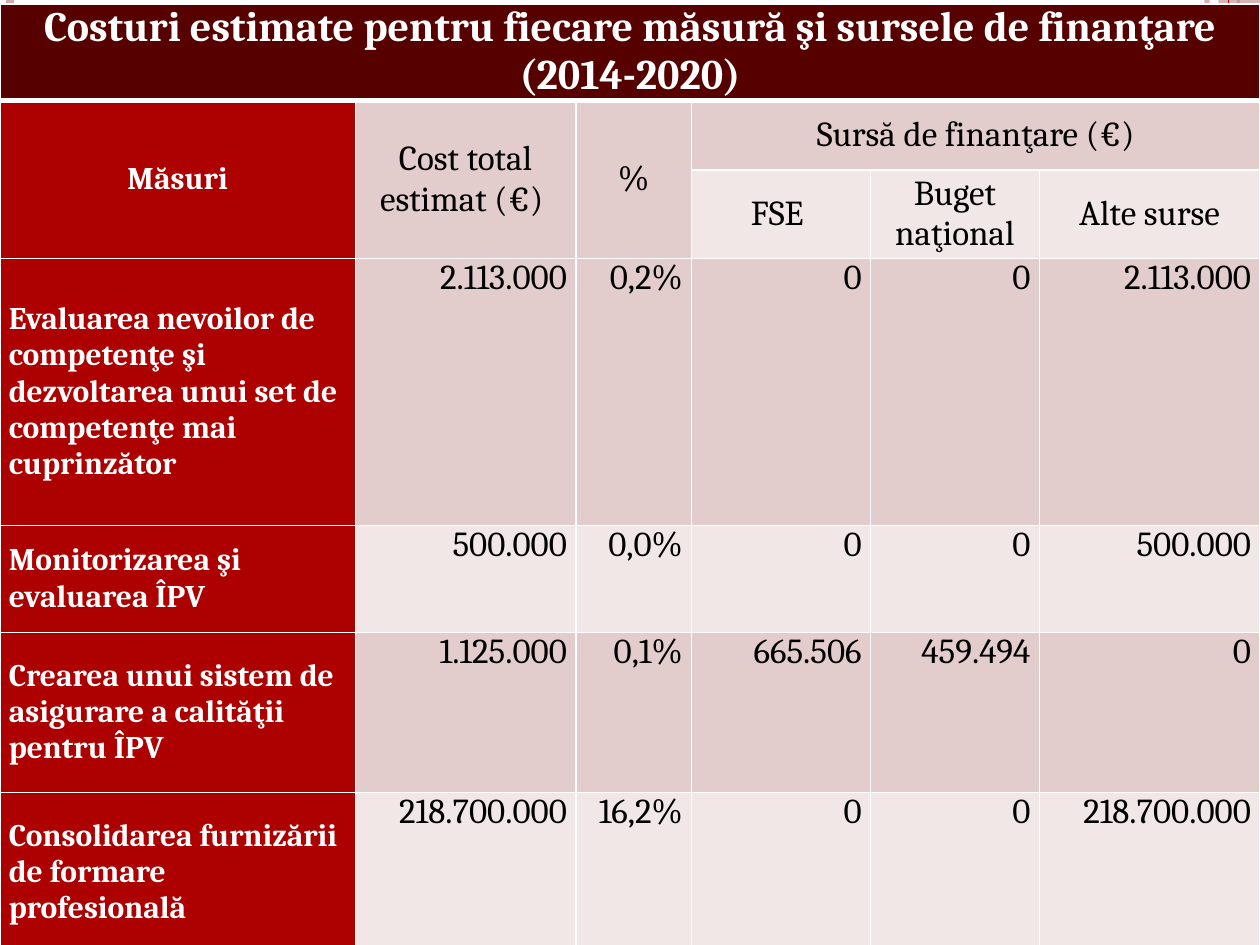
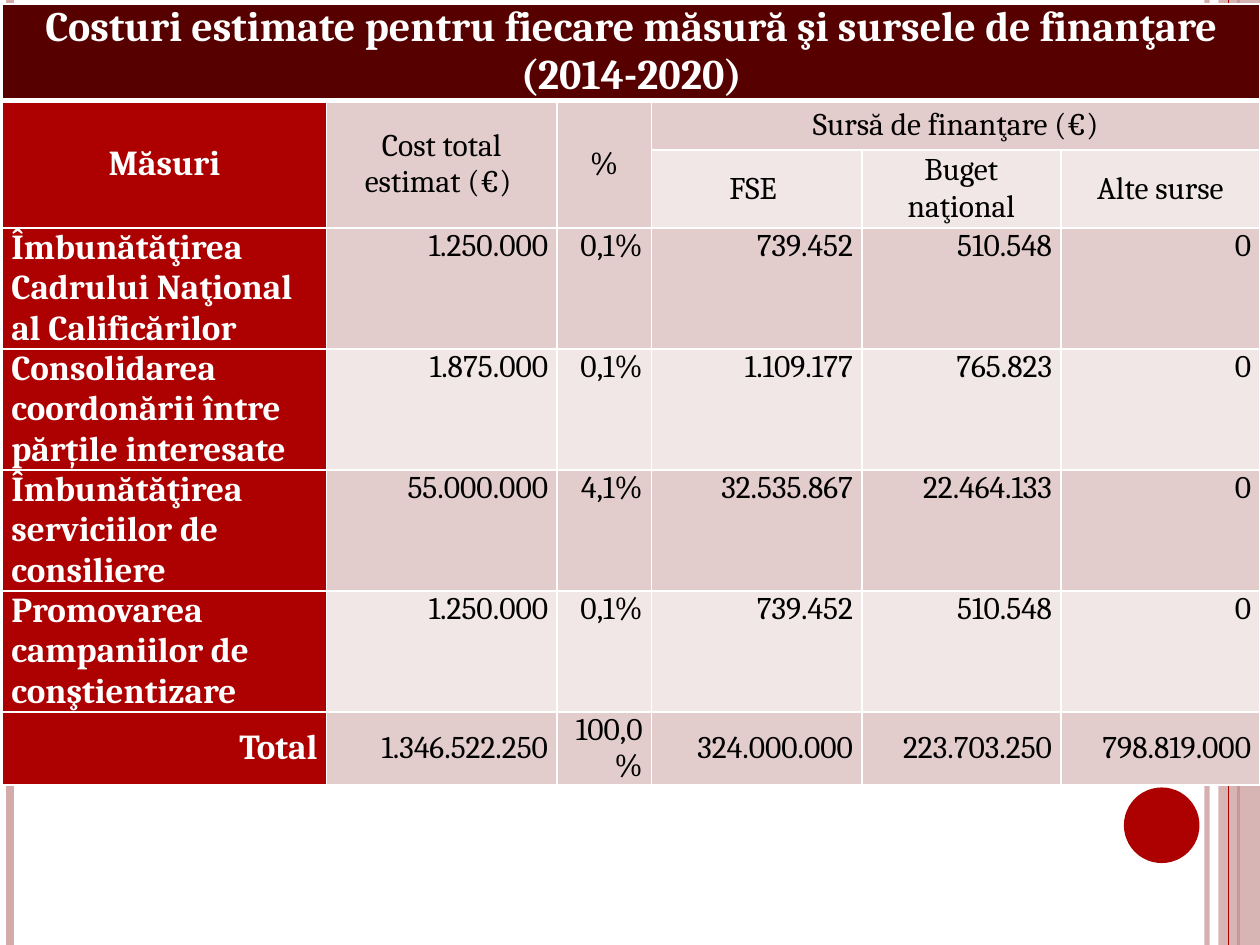
from lxml import etree
from pptx import Presentation
from pptx.dml.color import RGBColor
from pptx.enum.shapes import MSO_CONNECTOR, MSO_SHAPE
from pptx.enum.text import MSO_ANCHOR, PP_ALIGN
from pptx.oxml.ns import qn
from pptx.util import Inches, Pt

LEFT, MID, RIGHT = PP_ALIGN.LEFT, PP_ALIGN.CENTER, PP_ALIGN.RIGHT
TOP, CENTER = MSO_ANCHOR.TOP, MSO_ANCHOR.MIDDLE
RECT, OVAL = MSO_SHAPE.RECTANGLE, MSO_SHAPE.OVAL
STRAIGHT = MSO_CONNECTOR.STRAIGHT

WHITE = RGBColor(0xFF, 0xFF, 0xFF)
BLACK = RGBColor(0, 0, 0)
RED = RGBColor(0xAD, 0x01, 0x01)
DARK = RGBColor(0x56, 0x00, 0x00)
ROSE = RGBColor(0xD3, 0xAB, 0xAB)
BANDS = [RGBColor(0xF1, 0xE7, 0xE7), RGBColor(0xE3, 0xCC, 0xCC)]

TITLE = "Costuri estimate pentru fiecare măsură şi sursele de finanţare (2014-2020)"
HEADS = ["Măsuri", "Cost total estimat (€) ", "%", "Sursă de finanţare (€)"]
SOURCES = ["FSE ", "Buget naţional", "Alte surse"]
# First and last cell of each merged area, as (row, column)
SPANS = [((0, 0), (0, 5)), ((1, 0), (2, 0)), ((1, 1), (2, 1)),
         ((1, 2), (2, 2)), ((1, 3), (1, 5))]

COSTS = [
    ["Evaluarea nevoilor de competenţe şi dezvoltarea unui set de "
     "competenţe mai cuprinzător", "2.113.000", "0,2%", "0", "0", "2.113.000"],
    ["Monitorizarea şi evaluarea ÎPV", "500.000", "0,0%", "0", "0", "500.000"],
    ["Crearea unui sistem de asigurare a calităţii pentru ÎPV",
     "1.125.000", "0,1%", "665.506", "459.494", "0"],
    ["Consolidarea furnizării de formare profesională",
     "218.700.000", "16,2%", "0", "0", "218.700.000"],
]
MORE = [
    ["Îmbunătăţirea Cadrului Naţional al Calificărilor",
     "1.250.000", "0,1%", "739.452", "510.548", "0"],
    ["Consolidarea coordonării între părțile interesate",
     "1.875.000", "0,1%", "1.109.177", "765.823", "0"],
    ["Îmbunătăţirea serviciilor de consiliere",
     "55.000.000", "4,1%", "32.535.867", "22.464.133", "0"],
    ["Promovarea campaniilor de conştientizare",
     "1.250.000", "0,1%", "739.452", "510.548", "0"],
    ["Total", "1.346.522.250", "100,0%", "324.000.000", "223.703.250",
     "798.819.000"],
]


def fade(part, alpha):
    """Set the opacity, in percent, of the colour within an element."""
    color = next(part.iter(qn("a:srgbClr")))
    etree.SubElement(color, qn("a:alpha"), val=str(alpha * 1000))


class Deck:
    def __init__(self):
        self.prs = Presentation()
        self.prs.slide_width, self.prs.slide_height = Inches(10), Inches(7.5)
        self.slide = None
        self.font = "Cambria"

    def page(self):
        """Start a slide with the shared side bands and disc."""
        self.slide = self.prs.slides.add_slide(self.prs.slide_layouts[6])
        self.line(9.58, ROSE, 3, 93)
        self.line(0.08, ROSE, 4.5)
        self.line(9.83, RED, 1.5)
        self.shape(RECT, (9.67, 0, 0.33, 7.5), ROSE, 87)
        self.line(9.75, RED, 0.75)
        self.shape(OVAL, (8.92, 6.25, 0.6, 0.6), RED)

    def line(self, x, color, width, alpha=100):
        rule = self.slide.shapes.add_connector(
            STRAIGHT, Inches(x), 0, Inches(x), Inches(7.5))
        rule.line.color.rgb = color
        rule.line.width = Pt(width)
        props = rule._element.spPr
        if alpha < 100:
            fade(props, alpha)
        etree.SubElement(props, qn("a:effectLst"))

    def shape(self, kind, box, color, alpha=100):
        item = self.slide.shapes.add_shape(kind, *map(Inches, box))
        item.shadow.inherit = False
        item.fill.solid()
        item.fill.fore_color.rgb = color
        item.line.fill.background()
        if alpha < 100:
            fade(item._element.spPr, alpha)

    def border(self, cell, row):
        """Draw white cell edges, thick between title and heads."""
        props = cell._tc.get_or_add_tcPr()
        thick = {("B", 0), ("T", 1)}
        for side in "LRTB":
            width = Pt(3 if (side, row) in thick else 1)
            edge = etree.SubElement(props, qn("a:ln" + side), w=str(width))
            fill = etree.SubElement(edge, qn("a:solidFill"))
            etree.SubElement(fill, qn("a:srgbClr"), val=str(WHITE))

    def cell(self, cell, row, text, color, style):
        self.border(cell, row)
        cell.fill.solid()
        cell.fill.fore_color.rgb = color
        if cell.is_spanned:
            return
        size, ink, bold, align, anchor = style
        form = {"margin_left": Inches(0.07), "margin_right": Inches(0.07),
                "margin_top": 0, "margin_bottom": 0,
                "vertical_anchor": anchor, "text": text}
        for name, value in form.items():
            setattr(cell, name, value)
        para = cell.text_frame.paragraphs[0]
        para.alignment = align
        font = para.runs[0].font
        for name, value in {"name": self.font, "size": Pt(size),
                            "bold": bold}.items():
            setattr(font, name, value)
        font.color.rgb = ink

    def table(self, left, cols, rows, data, label, body):
        """Add a cost table; label and body are text sizes."""
        grid = [[TITLE] + [""] * 5, HEADS + [""] * 2, [""] * 3 + SOURCES] + data
        frame = self.slide.shapes.add_table(
            len(grid), len(cols), Inches(left), Inches(0.03),
            Inches(sum(cols)), Inches(sum(rows)))
        table = frame.table
        table.first_row = table.horz_banding = False
        for col, width in zip(table.columns, cols):
            col.width = Inches(width)
        for row, height in zip(table.rows, rows):
            row.height = Inches(height)
        for start, end in SPANS:
            table.cell(*start).merge(table.cell(*end))

        for r, line in enumerate(grid):
            total = line[0] == "Total"
            for c, text in enumerate(line):
                if r == 0:
                    color, style = DARK, (24, WHITE, True, MID, TOP)
                elif c == 0:
                    align = MID if r < 3 else RIGHT if total else LEFT
                    color, style = RED, (label, WHITE, True, align, CENTER)
                else:
                    color = BANDS[1 if r == 2 and c < 3 else r % 2]
                    align = MID if r < 3 else RIGHT
                    anchor = CENTER if r < 3 or total else TOP
                    style = (body, BLACK, False, align, anchor)
                self.cell(table.cell(r, c), r, text, color, style)


def main():
    deck = Deck()

    # First four measures
    deck.page()
    deck.table(0, [2.82, 1.75, 0.92, 1.42, 1.34, 1.75],
               [0.77, 0.55, 0.7, 2.12, 0.85, 1.27, 1.27], COSTS, 18, 20)

    # Other measures and the total
    deck.page()
    deck.table(0.02, [2.57, 1.83, 0.75, 1.67, 1.58, 1.58],
               [0.77, 0.39, 0.62] + [0.96] * 4 + [0.57], MORE, 20, 18)

    deck.prs.save("out.pptx")


if __name__ == "__main__":
    main()
